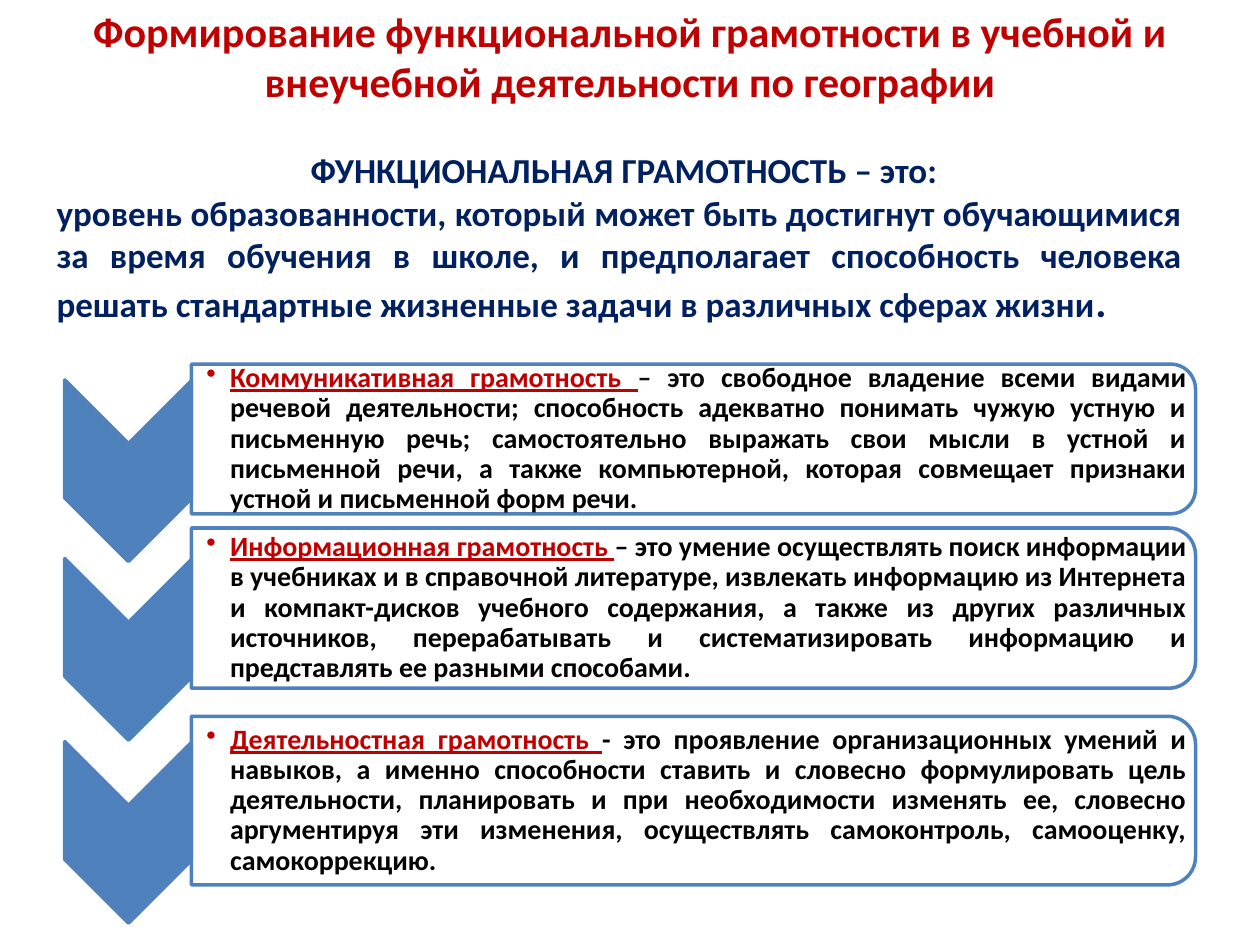
from dataclasses import dataclass

from lxml import etree
from pptx import Presentation
from pptx import util as u
from pptx.dml import color
from pptx.enum import shapes, text
from pptx.oxml import ns

RED, NAVY, BLUE, WHITE = "C00000", "002060", "4F81BD", "FFFFFF"
INK, BLACK = "0D0D0D", "000000"
CHEVRON_CENTER, CHEVRON_LENGTH, CHEVRON_BREADTH = 2.59, 3.66, 2.57
PANEL_LEFT, PANEL_LENGTH = 3.86, 20.24
TEXT_WIDTH, TEXT_MARGIN = 20.09, 0.15
BULLET_INDENT = 0.48


@dataclass
class Span:
    wording: str
    size: int
    hue: str
    underline: bool = False


@dataclass
class Literacy:
    chevron_middle: float
    panel_middle: float
    panel_height: float
    spans: list[Span]


LITERACIES = [
    Literacy(9.49, 8.85, 3.02, [
        Span("Коммуникативная грамотность ", 16, RED, True),
        Span("– это ", 16, INK),
        Span("свободное владение всеми видами речевой деятельности; способность "
             "адекватно понимать чужую устную и письменную речь; самостоятельно "
             "выражать свои мысли в устной и письменной речи, а также компьютерной, "
             "которая совмещает признаки устной и письменной форм речи.", 16, BLACK),
    ]),
    Literacy(13.09, 12.26, 3.23, [
        Span("Информационная грамотность ", 16, RED, True),
        Span("– это умение осуществлять поиск информации в учебниках и в справочной "
             "литературе, извлекать информацию из Интернета и компакт-дисков учебного "
             "содержания, а также из других различных источников, перерабатывать и "
             "систематизировать информацию и представлять ее разными способами.", 16, BLACK),
    ]),
    Literacy(16.78, 16.14, 3.4, [
        Span("Деятельностная грамотность ", 16, RED, True),
        Span("- это проявление организационных умений и навыков, а именно способности "
             "ставить и словесно формулировать цель деятельности, планировать и при "
             "необходимости изменять ее, словесно аргументируя эти изменения, "
             "осуществлять самоконтроль, самооценку, самокоррекцию.", 16, BLACK),
    ]),
]


def rgb(value: str) -> color.RGBColor:
    return color.RGBColor.from_string(value)


def apply(target, formats: dict) -> None:
    for name, value in formats.items():
        setattr(target, name, value)


def write(para, spans: list[Span], **formats) -> None:
    apply(para, formats)
    for span in spans:
        run = para.add_run()
        run.text = span.wording
        apply(run.font, {"name": "Calibri", "size": u.Pt(span.size),
                         "bold": True, "underline": span.underline})
        run.font.color.rgb = rgb(span.hue)


def add_box(page, left: float, top: float, width: float, height: float):
    box = page.shapes.add_textbox(u.Cm(left), u.Cm(top), u.Cm(width), u.Cm(height))
    box.text_frame.word_wrap = True
    return box


def add_turned(page, kind, center: float, middle: float,
               width: float, height: float, fill: str):
    shape = page.shapes.add_shape(
        kind, u.Cm(center - width / 2), u.Cm(middle - height / 2), u.Cm(width), u.Cm(height))
    apply(shape, {"rotation": 90})
    shape.shadow.inherit = False
    shape.fill.solid()
    shape.fill.fore_color.rgb = rgb(fill)
    shape.line.color.rgb = rgb(BLUE)
    shape.line.width = u.Pt(2)
    return shape


def set_alpha(shape, percent: int) -> None:
    tint = shape.fill._xPr.find(ns.qn("a:solidFill"))[0]
    etree.SubElement(tint, ns.qn("a:alpha"), val=str(percent * 1000))


def add_bullet(para) -> None:
    props = para._p.get_or_add_pPr()
    props.set("marL", str(u.Cm(BULLET_INDENT)))
    props.set("indent", str(-u.Cm(BULLET_INDENT)))
    etree.SubElement(props, ns.qn("a:buChar"), char="•")


def add_literacy(page, item: Literacy) -> None:
    add_turned(page, shapes.MSO_SHAPE.CHEVRON, CHEVRON_CENTER, item.chevron_middle,
               CHEVRON_LENGTH, CHEVRON_BREADTH, BLUE)
    panel = add_turned(page, shapes.MSO_SHAPE.ROUND_2_SAME_RECTANGLE,
                       PANEL_LEFT + PANEL_LENGTH / 2, item.panel_middle,
                       item.panel_height, PANEL_LENGTH, WHITE)
    set_alpha(panel, 90)
    height = item.panel_height - 2 * TEXT_MARGIN
    box = add_box(page, PANEL_LEFT, item.panel_middle - height / 2, TEXT_WIDTH, height)
    apply(box.text_frame, {
        "vertical_anchor": text.MSO_ANCHOR.MIDDLE, "margin_left": u.Cm(0.3),
        "margin_top": u.Cm(0.03), "margin_right": u.Cm(0.03), "margin_bottom": u.Cm(0.03)})
    para = box.text_frame.paragraphs[0]
    write(para, item.spans, alignment=text.PP_ALIGN.JUSTIFY, level=1, line_spacing=0.9)
    add_bullet(para)


def add_title(page) -> None:
    title = page.shapes.title
    apply(title, {"left": u.Cm(1.27), "top": u.Cm(0.76),
                  "width": u.Cm(22.86), "height": u.Cm(1.75)})
    apply(title.text_frame, {"vertical_anchor": text.MSO_ANCHOR.MIDDLE,
                             "margin_bottom": u.Cm(1.14),
                             "auto_size": text.MSO_AUTO_SIZE.NONE})
    write(title.text_frame.paragraphs[0],
          [Span("Формирование функциональной грамотности в учебной и "
                "внеучебной деятельности по географии", 24, RED)],
          alignment=text.PP_ALIGN.CENTER)


def add_definition(page) -> None:
    frame = add_box(page, 0.89, 2.72, 23.19, 4.01).text_frame
    frame.auto_size = text.MSO_AUTO_SIZE.SHAPE_TO_FIT_TEXT
    write(frame.paragraphs[0],
          [Span(" ", 24, BLACK), Span("ФУНКЦИОНАЛЬНАЯ ГРАМОТНОСТЬ – это:", 20, NAVY)],
          alignment=text.PP_ALIGN.CENTER)
    write(frame.add_paragraph(),
          [Span("уровень образованности, который может быть достигнут обучающимися "
                "за время обучения в школе, и предполагает способность человека "
                "решать стандартные жизненные задачи в различных сферах жизни", 20, NAVY),
           Span(".", 24, NAVY)],
          alignment=text.PP_ALIGN.JUSTIFY)


def main() -> None:
    deck = Presentation()
    apply(deck, {"slide_width": u.Cm(25.4), "slide_height": u.Cm(19.05)})
    page = deck.slides.add_slide(deck.slide_layouts[5])
    add_title(page)
    add_definition(page)
    for item in LITERACIES:
        add_literacy(page, item)
    deck.save("out.pptx")


if __name__ == "__main__":
    main()
